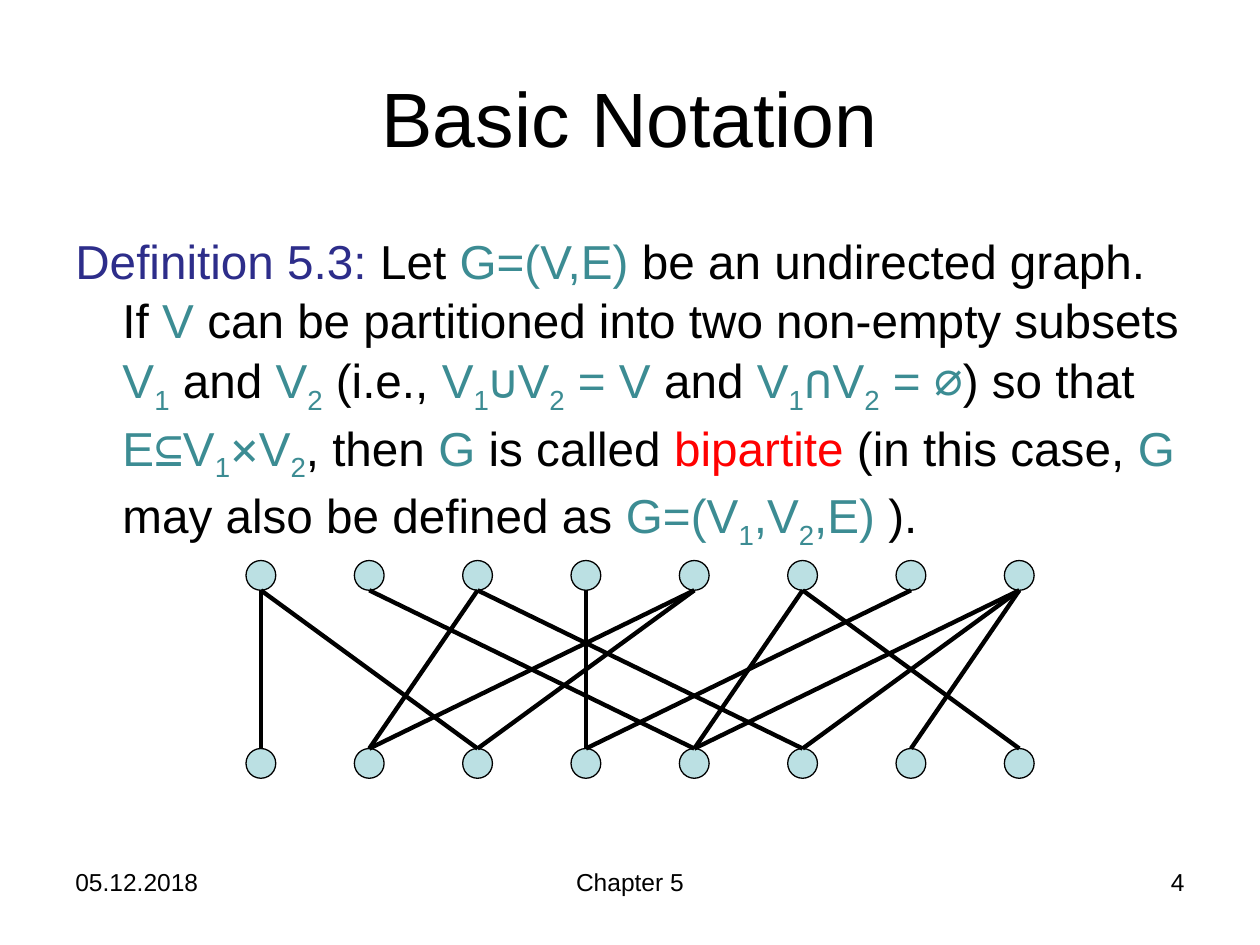
from itertools import groupby
from lxml.etree import SubElement
from pptx import Presentation
from pptx.dml.color import RGBColor
from pptx.enum.shapes import MSO_CONNECTOR, MSO_SHAPE
from pptx.enum.text import MSO_ANCHOR, PP_ALIGN
from pptx.oxml.ns import qn
from pptx.util import Cm, Pt

BLACK, NAVY, TEAL, RED = "000000", "2D2D8A", "3C8C93", "FF0000"


def rgb(color):
    return RGBColor.from_string(color)


def add_text(x, y, w, h, text, size, align, anchor=MSO_ANCHOR.TOP):
    tf = s.shapes.add_textbox(Cm(x), Cm(y), Cm(w), Cm(h)).text_frame
    tf.word_wrap = True
    tf.vertical_anchor = anchor
    p = tf.paragraphs[0]
    p.text = text
    p.alignment = align
    p.font.name = "Arial"
    p.font.size = Pt(size)
    p.font.color.rgb = rgb(BLACK)
    return p


prs = Presentation()
prs.slide_width, prs.slide_height = Cm(25.4), Cm(19.05)
s = prs.slides.add_slide(prs.slide_layouts[6])

add_text(1.27, 0.76, 22.86, 3.18, "Basic Notation", 44, PP_ALIGN.CENTER, MSO_ANCHOR.MIDDLE)

definition = [
    ("Definition 5.3: ", NAVY), ("Let ", BLACK), ("G=(V,E) ", TEAL),
    ("be an undirected graph. If ", BLACK), ("V ", TEAL),
    ("can be partitioned into two non-empty subsets ", BLACK),
    ("V1 ", TEAL), ("and ", BLACK), ("V2", TEAL), (" (i.e., ", BLACK),
    ("V1∪V2 = V ", TEAL), ("and ", BLACK), ("V1∩V2 = ∅", TEAL),
    (") so that ", BLACK), ("E⊆V1×V2", TEAL), (", then ", BLACK),
    ("G ", TEAL), ("is called ", BLACK), ("bipartite ", RED),
    ("(in this case, ", BLACK), ("G ", TEAL),
    ("may also be defined as ", BLACK), ("G=(V1,V2,E) ", TEAL), (").", BLACK),
]
p = add_text(1.27, 4.5, 22.86, 6.6, "", 27.2, PP_ALIGN.LEFT)
p.line_spacing = 1.04
pPr = p._p.get_or_add_pPr()
pPr.set("marL", str(Cm(0.95)))
pPr.set("indent", str(-Cm(0.95)))
for text, color in definition:
    for (subscript, symbol), chars in groupby(
        text, lambda c: (color == TEAL and c.isdigit(), c in "∪∩∅⊆×")
    ):
        r = p.add_run()
        r.text = "".join(chars)
        r.font.color.rgb = rgb(color)
        if subscript:
            r._r.get_or_add_rPr().set("baseline", "-25000")
        if symbol:
            r.font.name = "DejaVu Sans Mono"

for x, w, text, align in [
    (1.27, 5.92, "05.12.2018", PP_ALIGN.LEFT),
    (8.68, 8.04, "Chapter 5", PP_ALIGN.CENTER),
    (18.21, 5.92, "4", PP_ALIGN.RIGHT),
]:
    add_text(x, 17.35, w, 1.32, text, 14, align)

diameter = 0.6
centers = [5.26 + 2.184 * i for i in range(8)]
top_row, bottom_row = 11.3, 15.09
for y in (top_row, bottom_row):
    for x in centers:
        sp = s.shapes.add_shape(
            MSO_SHAPE.OVAL, Cm(x - diameter / 2), Cm(y), Cm(diameter), Cm(diameter)
        )
        sp.shadow.inherit = False
        sp.fill.solid()
        sp.fill.fore_color.rgb = rgb("BBE0E3")
        sp.line.color.rgb = rgb(BLACK)
        sp.line.width = Pt(0.75)

edges = [
    (7, 5), (3, 3), (4, 1), (1, 4), (4, 5), (3, 6), (0, 0),
    (2, 0), (5, 7), (4, 7), (6, 7), (1, 2), (2, 4), (5, 2),
]
for lower, upper in edges:
    edge = s.shapes.add_connector(
        MSO_CONNECTOR.STRAIGHT,
        Cm(centers[lower]), Cm(bottom_row),
        Cm(centers[upper]), Cm(top_row + diameter),
    )
    edge.line.color.rgb = rgb(BLACK)
    edge.line.width = Pt(2.5)
    SubElement(edge._element.spPr, qn("a:effectLst"))

prs.save("out.pptx")
